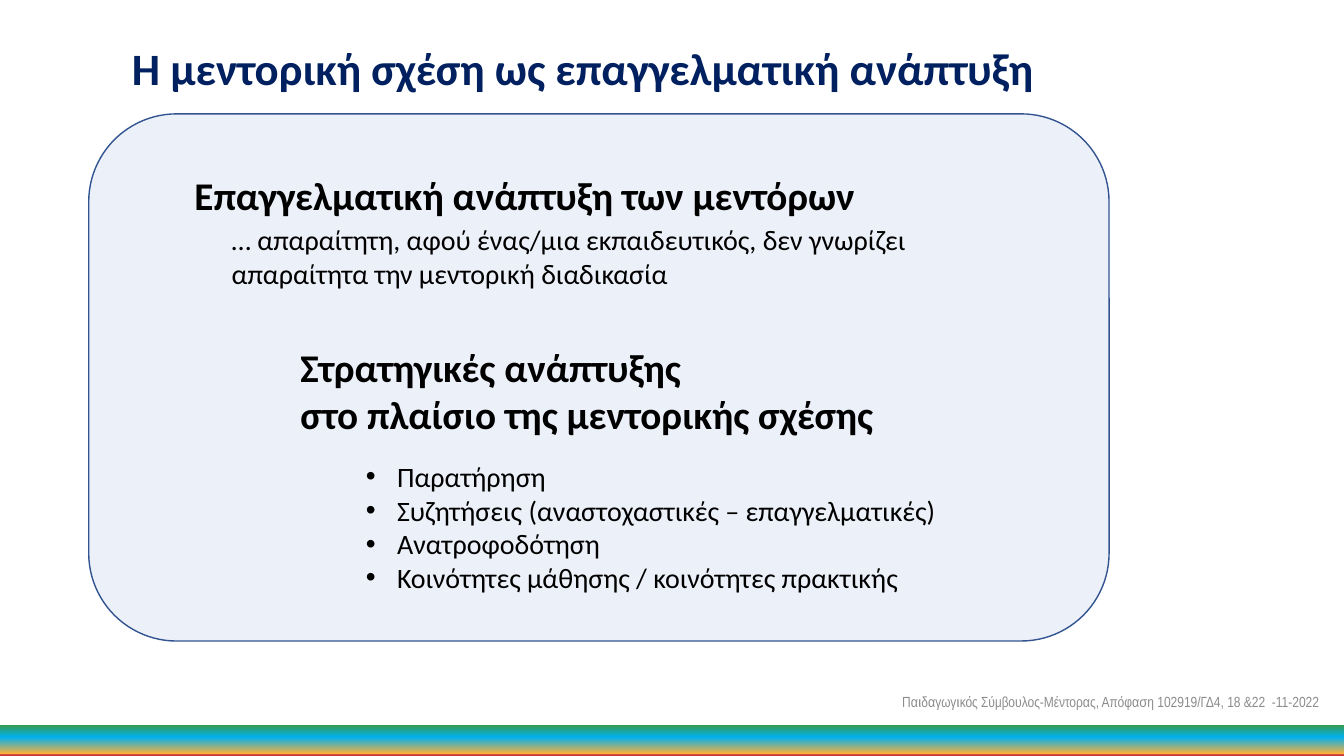
from lxml.etree import SubElement
from pptx import Presentation
from pptx.dml.color import RGBColor as RGB
from pptx.enum.shapes import MSO_SHAPE as Shape
from pptx.enum.text import MSO_ANCHOR as Anchor
from pptx.oxml.ns import qn
from pptx.util import Emu, Inches, Pt

COLORS = {
    "title": "002060", "text": "000000", "footer": "8C8C8C",
    "panel": "B4C7E7", "outline": "325491",
}
BAND_STOPS = [(0, "399A48"), (39, "00B0F0"), (93, "FBB03B"), (96, "CC3333")]

deck = Presentation()
deck.slide_width, deck.slide_height = Inches(13.33), Inches(7.5)
W, H = deck.slide_width, deck.slide_height
slide = deck.slides.add_slide(deck.slide_layouts[6])


def add_text(lines, left, top, width, height, size=20, color="text", bold=False,
             font="Calibri", anchor=Anchor.TOP, bullet=None):
    """Write one paragraph per line; lengths are in inches."""
    box = slide.shapes.add_textbox(*map(Inches, (left, top, width, height)))
    frame = box.text_frame
    frame.word_wrap = True
    frame.vertical_anchor = anchor
    for index, line in enumerate(lines):
        paragraph = frame.paragraphs[0] if index == 0 else frame.add_paragraph()
        run = paragraph.add_run()
        run.text = line
        run.font.size, run.font.bold, run.font.name = Pt(size), bold, font
        run.font.color.rgb = RGB.from_string(COLORS[color])
        if bullet:
            props = paragraph._p.get_or_add_pPr()
            props.set("marL", str(Inches(0.31)))
            props.set("indent", str(-Inches(0.31)))
            SubElement(props, qn("a:buFont")).set("typeface", "Arial")
            SubElement(props, qn("a:buChar")).set("char", bullet)


# Panel behind the content
panel = slide.shapes.add_shape(
    Shape.ROUNDED_RECTANGLE, *map(Inches, (0.88, 1.13, 10.12, 5.23)))
panel.shadow.inherit = False
panel.fill.solid()
panel.fill.fore_color.rgb = RGB.from_string(COLORS["panel"])
panel_color = panel.fill._xPr.find(qn("a:solidFill"))[0]
SubElement(panel_color, qn("a:alpha")).set("val", "25000")
panel.line.color.rgb = RGB.from_string(COLORS["outline"])
panel.line.width = Pt(1)

# Title and content
add_text(["Η μεντορική σχέση ως επαγγελματική ανάπτυξη"],
         1.21, 0.36, 10.01, 0.64, size=32, color="title", bold=True)
add_text(["Επαγγελματική ανάπτυξη των μεντόρων"],
         1.83, 1.65, 7.11, 0.57, size=28, bold=True)
add_text(["… απαραίτητη, αφού ένας/μια εκπαιδευτικός, δεν γνωρίζει "
          "απαραίτητα την μεντορική διαδικασία"],
         2.2, 2.16, 7.09, 0.77)
add_text(["Στρατηγικές ανάπτυξης", "στο πλαίσιο της μεντορικής σχέσης"],
         2.88, 3.36, 7.4, 1.04, size=28, bold=True)
add_text(["Παρατήρηση",
          "Συζητήσεις (αναστοχαστικές – επαγγελματικές)",
          "Ανατροφοδότηση",
          "Κοινότητες μάθησης / κοινότητες πρακτικής"],
         3.53, 4.51, 7.09, 1.45, bullet="•")

# Footer and colour band
add_text(["Παιδαγωγικός Σύμβουλος-Μέντορας, Απόφαση 102919/ΓΔ4, 18 &22  -11-2022"],
         8.85, 6.76, 4.48, 0.4, size=10.5, color="footer",
         font="Arial Narrow", anchor=Anchor.MIDDLE)
band_height = Inches(0.31)
band = slide.shapes.add_shape(
    Shape.RECTANGLE, 0, Emu(H - band_height), W, band_height)
band.shadow.inherit = False
band.line.fill.background()
band.fill.gradient()
band.fill.gradient_angle = 270
stop_list = band.fill._xPr.find(qn("a:gradFill")).find(qn("a:gsLst"))
for default_stop in list(stop_list):
    stop_list.remove(default_stop)
for percent, color in BAND_STOPS:
    stop = SubElement(stop_list, qn("a:gs"))
    stop.set("pos", str(percent * 1000))
    SubElement(stop, qn("a:srgbClr")).set("val", color)

deck.save("out.pptx")
